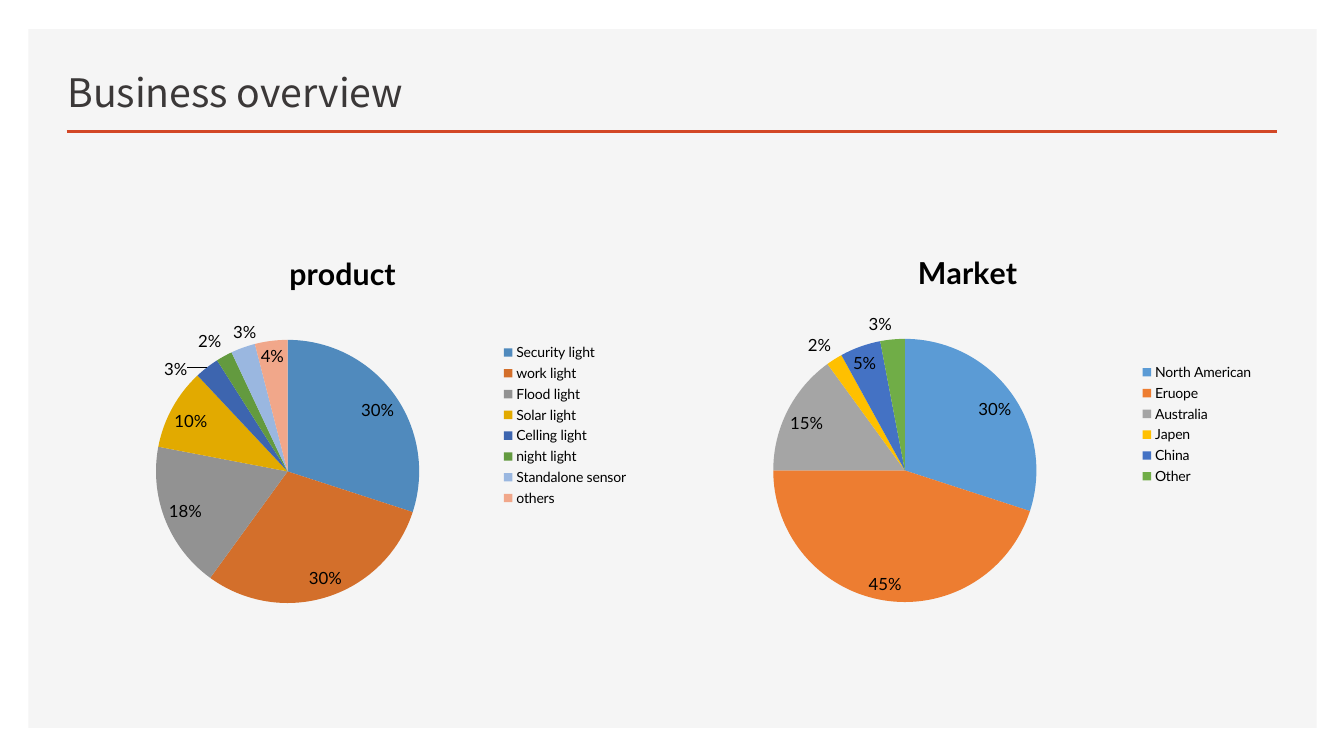
"""Build the business overview slide with its product and market pie charts."""
from pptx import Presentation
from pptx.chart.data import CategoryChartData
from pptx.dml.color import RGBColor
from pptx.enum.chart import XL_CHART_TYPE as ChartType
from pptx.enum.chart import XL_LABEL_POSITION as LabelPosition
from pptx.enum.chart import XL_LEGEND_POSITION as LegendPosition
from pptx.enum.shapes import MSO_CONNECTOR as Connector
from pptx.enum.shapes import MSO_SHAPE as Shape
from pptx.enum.text import MSO_ANCHOR as Anchor
from pptx.oxml import parse_xml
from pptx.oxml.ns import nsdecls
from pptx.util import Pt

TITLE = "Business overview"
CHARTS = [
    {
        "title": "product",
        "position": (33.1, 166.3),
        "pie": (0.185, 0.278),
        "slices": [
            ("Security light", 0.3, "508ABD"),
            ("work light", 0.3, "D36F2B"),
            ("Flood light", 0.18, "929292"),
            ("Solar light", 0.1, "E2AA00"),
            ("Celling light", 0.03, "3D65AF"),
            ("night light", 0.02, "639A3F"),
            ("Standalone sensor", 0.03, "9AB7E0"),
            ("others", 0.04, "F1A78A"),
        ],
    },
    {
        "title": "Market",
        "position": (479.5, 165.6),
        "pie": (0.172, 0.278),
        "slices": [
            ("North American", 0.3, "5B9BD5"),
            ("Eruope", 0.45, "ED7D31"),
            ("Australia", 0.15, "A5A5A5"),
            ("Japen", 0.02, "FFC000"),
            ("China", 0.05, "4472C4"),
            ("Other", 0.03, "70AD47"),
        ],
    },
]
CHART_SIZE = (423.4, 275)
PIE_DIAMETER = 188
THEME = {
    "panel": "F5F5F5",
    "rule": "D24726",
    "title": "3B3838",
    "text": "000000",
    "title_font": "Noto Sans CJK SC",
    "chart_font": "Lato",
    "title_size": 28,
    "chart_title_size": 21.6,
    "chart_size": 18,
    "label_size": 12,
    "legend_size": 10,
}


def style_font(font, size, color=THEME["text"], name=THEME["chart_font"], bold=False):
    font.size = Pt(size)
    font.name = name
    font.bold = bold
    font.color.rgb = RGBColor.from_string(color)


def add_background(slide):
    panel = slide.shapes.add_shape(Shape.RECTANGLE, Pt(20.2), Pt(20.9), Pt(920.2), Pt(499))
    panel.shadow.inherit = False
    panel.fill.solid()
    panel.fill.fore_color.rgb = RGBColor.from_string(THEME["panel"])
    panel.line.fill.background()

    rule = slide.shapes.add_connector(Connector.STRAIGHT, Pt(47.6), Pt(94), Pt(912.3), Pt(94))
    rule.line.color.rgb = RGBColor.from_string(THEME["rule"])
    rule.line.width = Pt(2)
    rule.element.spPr.append(parse_xml(f"<a:effectLst {nsdecls('a')}/>"))


def add_title(slide):
    frame = slide.shapes.add_textbox(Pt(41), Pt(35.3), Pt(541.4), Pt(50.4)).text_frame
    frame.word_wrap = True
    frame.vertical_anchor = Anchor.BOTTOM
    frame.text = TITLE
    style_font(frame.paragraphs[0].runs[0].font, THEME["title_size"],
               THEME["title"], THEME["title_font"])


def place_pie(chart, corner):
    extent = [PIE_DIAMETER / length for length in CHART_SIZE]
    values = "".join(
        f'<c:{tag} val="{value:.3f}"/>' for tag, value in zip("xywh", [*corner, *extent])
    )
    layout = parse_xml(
        f'<c:layout {nsdecls("c")}><c:manualLayout><c:layoutTarget val="inner"/>'
        f'<c:xMode val="edge"/><c:yMode val="edge"/>{values}</c:manualLayout></c:layout>'
    )
    plot_area = chart.element.xpath("c:chart/c:plotArea")[0]
    for previous in plot_area.xpath("c:layout"):
        plot_area.remove(previous)
    plot_area.insert(0, layout)


def add_pie(slide, content):
    names, values, colors = zip(*content["slices"])
    data = CategoryChartData(number_format="0%")
    data.categories = names
    data.add_series(content["title"], values)
    box = [Pt(length) for length in (*content["position"], *CHART_SIZE)]
    chart = slide.shapes.add_chart(ChartType.PIE, *box, data).chart
    style_font(chart.font, THEME["chart_size"])
    place_pie(chart, content["pie"])

    chart.has_title = True
    title = chart.chart_title.text_frame
    title.text = content["title"]
    style_font(title.paragraphs[0].runs[0].font, THEME["chart_title_size"], bold=True)

    chart.has_legend = True
    chart.legend.position = LegendPosition.RIGHT
    chart.legend.include_in_layout = False
    style_font(chart.legend.font, THEME["legend_size"])

    plot = chart.plots[0]
    plot.vary_by_categories = True
    for index, color in enumerate(colors):
        fill = plot.series[0].points[index].format.fill
        fill.solid()
        fill.fore_color.rgb = RGBColor.from_string(color)

    plot.has_data_labels = True
    labels = plot.data_labels
    labels.show_value = True
    labels.show_percentage = False
    labels.number_format = "0%"
    labels.number_format_is_linked = False
    labels.position = LabelPosition.BEST_FIT
    style_font(labels.font, THEME["label_size"])


def main():
    presentation = Presentation()
    presentation.slide_width = Pt(960)
    presentation.slide_height = Pt(540)
    slide = presentation.slides.add_slide(presentation.slide_layouts[6])
    add_background(slide)
    add_title(slide)
    for content in CHARTS:
        add_pie(slide, content)
    presentation.save("out.pptx")


if __name__ == "__main__":
    main()
